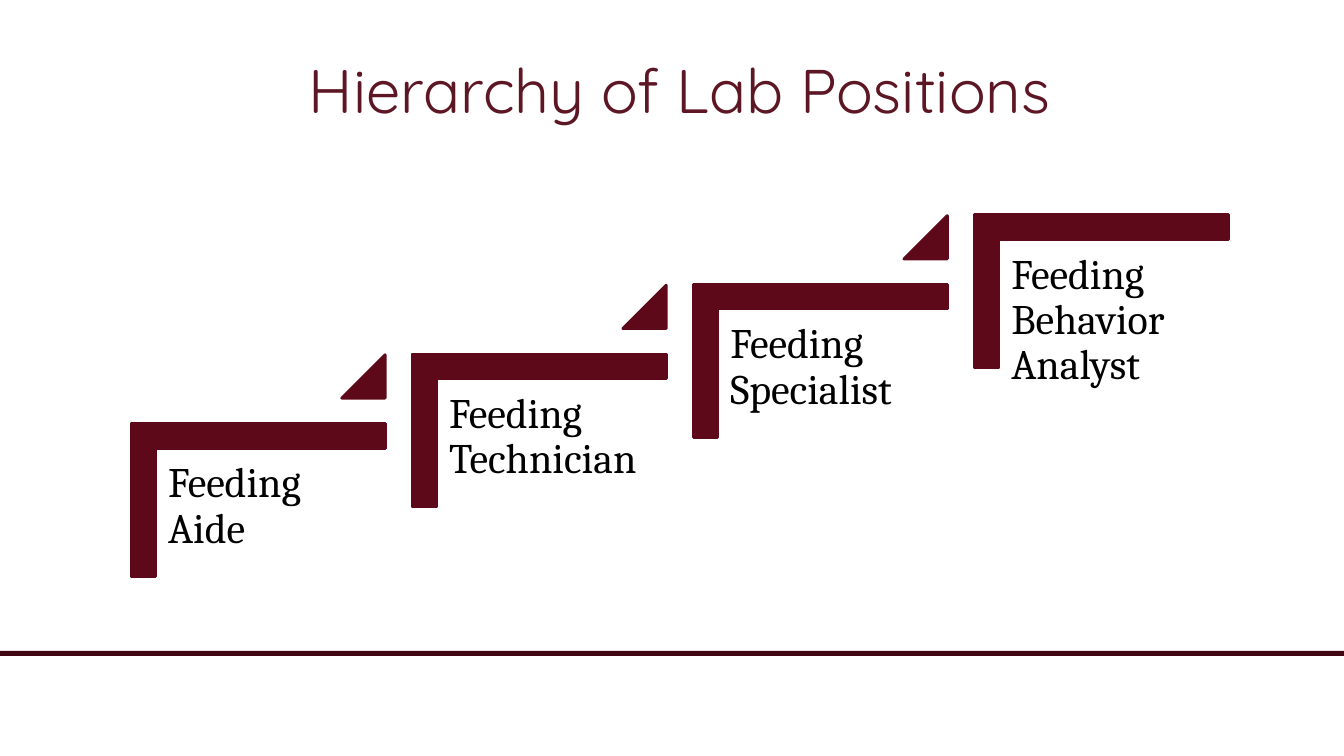
from dataclasses import dataclass

from pptx import Presentation
from pptx.dml.color import RGBColor
from pptx.enum.shapes import MSO_SHAPE
from pptx.enum.text import MSO_ANCHOR, PP_ALIGN
from pptx.util import Pt

RECT = MSO_SHAPE.RECTANGLE
CORNER = MSO_SHAPE.CORNER
TRIANGLE = MSO_SHAPE.ISOSCELES_TRIANGLE
TOP, MIDDLE = MSO_ANCHOR.TOP, MSO_ANCHOR.MIDDLE
LEFT, CENTER = PP_ALIGN.LEFT, PP_ALIGN.CENTER


@dataclass(frozen=True)
class Theme:
    title: str = "5D1724"
    step: str = "5E091A"
    rule: str = "410611"
    text: str = "000000"
    title_font: str = "Quicksand"
    body_font: str = "Cambria"
    title_size: int = 44
    body_size: int = 30
    outline: int = 2


THEME = Theme()
POSITIONS = ["Feeding Aide", "Feeding Technician", "Feeding Specialist",
             "Feeding Behavior Analyst"]

# Staircase geometry, in points
FIRST_X, FIRST_Y = 129.6, 266.4
RUN, RISE = 200.8, 49.7


def add_text(s, text, x, y, w, h, *, font, size, color, align=LEFT,
             anchor=TOP, inset=8.64, spacing=0.9):
    tf = s.shapes.add_textbox(Pt(x), Pt(y), Pt(w), Pt(h)).text_frame
    tf.word_wrap = True
    tf.vertical_anchor = anchor
    tf.margin_left = tf.margin_right = Pt(inset)
    tf.margin_top = tf.margin_bottom = Pt(inset)
    p = tf.paragraphs[0]
    p.alignment = align
    p.line_spacing = spacing
    r = p.add_run()
    r.text = text
    r.font.name = font
    r.font.size = Pt(size)
    r.font.color.rgb = RGBColor.from_string(color)


def add_solid(s, kind, x, y, w, h, *, color, outline=0, rotation=0, adj=()):
    sp = s.shapes.add_shape(kind, Pt(x), Pt(y), Pt(w), Pt(h))
    sp.shadow.inherit = False
    sp.rotation = rotation
    for i, value in enumerate(adj):
        sp.adjustments[i] = value
    sp.fill.solid()
    sp.fill.fore_color.rgb = RGBColor.from_string(color)
    if outline:
        sp.line.color.rgb = RGBColor.from_string(color)
        sp.line.width = Pt(outline)
    else:
        sp.line.fill.background()


def add_step(s, label, x, y, has_next):
    look = dict(color=THEME.step, outline=THEME.outline)
    add_solid(s, CORNER, x, y, 109.4, 181.6, rotation=90,
              adj=(0.161, 0.161), **look)
    add_text(s, label, x - 18.2, y + 54.7, 164, 144,
             font=THEME.body_font, size=THEME.body_size, color=THEME.text)
    if has_next:
        add_solid(s, TRIANGLE, x + 114.5, y - 13, 31, 31, adj=(1,), **look)


def main():
    prs = Presentation()
    prs.slide_width, prs.slide_height = Pt(960), Pt(540)
    s = prs.slides.add_slide(prs.slide_layouts[6])

    # Footer rule and title
    add_solid(s, RECT, 0, 465, 960, 3.6, color=THEME.rule)
    add_text(s, "Hierarchy of Lab Positions", 59, 21.6, 853.2, 90,
             font=THEME.title_font, size=THEME.title_size, color=THEME.title,
             align=CENTER, anchor=MIDDLE, inset=3.6)

    # Rising steps
    for i, label in enumerate(POSITIONS):
        add_step(s, label, FIRST_X + i * RUN, FIRST_Y - i * RISE,
                 has_next=i < len(POSITIONS) - 1)

    prs.save("out.pptx")


if __name__ == "__main__":
    main()
